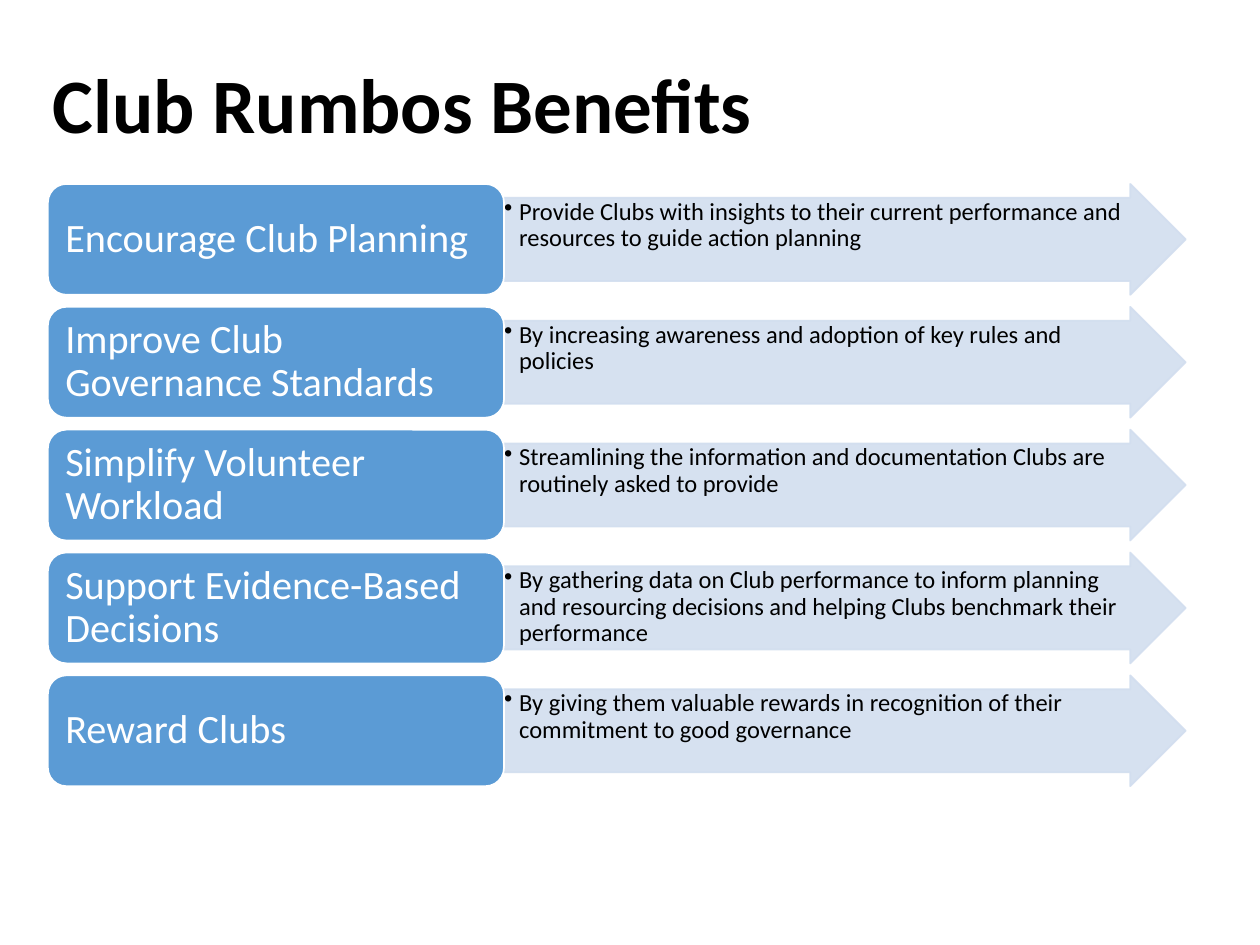
from lxml import etree
from pptx import Presentation
from pptx.dml.color import RGBColor
from pptx.enum.shapes import MSO_SHAPE
from pptx.enum.text import MSO_ANCHOR, MSO_AUTO_SIZE, PP_ALIGN
from pptx.oxml.ns import qn
from pptx.util import Inches, Pt

ARROW, ROUNDED = MSO_SHAPE.RIGHT_ARROW, MSO_SHAPE.ROUNDED_RECTANGLE
TOP, MIDDLE = MSO_ANCHOR.TOP, MSO_ANCHOR.MIDDLE
LEFT = PP_ALIGN.LEFT
NO_FIT = MSO_AUTO_SIZE.NONE

COLORS = {"black": "000000", "white": "FFFFFF", "blue": "5B9BD5", "pale": "D2DEEF"}

BENEFITS = [
    ("Encourage Club Planning",
     "Provide Clubs with insights to their current performance and resources to guide action planning"),
    ("Improve Club Governance Standards",
     "By increasing awareness and adoption of key rules and policies"),
    ("Simplify Volunteer Workload",
     "Streamlining the information and documentation Clubs are routinely asked to provide"),
    ("Support Evidence-Based Decisions",
     "By gathering data on Club performance to inform planning and resourcing decisions "
     "and helping Clubs benchmark their performance"),
    ("Reward Clubs",
     "By giving them valuable rewards in recognition of their commitment to good governance"),
]
ROW_TOP, ROW_BOTTOM, ROW_HEIGHT = 1.46, 6.24, 0.88
ROW_STEP = (ROW_BOTTOM - ROW_HEIGHT - ROW_TOP) / (len(BENEFITS) - 1)


def write(sp, text, size, color="black", bold=False, anchor=TOP, margins=(0.1, 0.05), bullet=False):
    tf = sp.text_frame
    tf.word_wrap = True
    tf.auto_size = NO_FIT
    tf.vertical_anchor = anchor
    tf.margin_left = tf.margin_right = Inches(margins[0])
    tf.margin_top = tf.margin_bottom = Inches(margins[1])
    p = tf.paragraphs[0]
    p.alignment = LEFT
    p.line_spacing = 0.9
    p.space_before = Pt(0)
    if bullet:
        pPr = p._p.get_or_add_pPr()
        pPr.set("marL", str(Inches(0.12)))
        pPr.set("indent", str(-Inches(0.12)))
        etree.SubElement(pPr, qn("a:buChar"), char="•")
    r = p.add_run()
    r.text = text
    r.font.name = "Calibri"
    r.font.size = Pt(size)
    r.font.bold = bold
    r.font.color.rgb = RGBColor.from_string(COLORS[color])


def add_block(shape, left, top, width, fill, line, alpha=None):
    sp = slide.shapes.add_shape(shape, Inches(left), Inches(top), Inches(width), Inches(ROW_HEIGHT))
    sp.shadow.inherit = False
    sp.fill.solid()
    sp.fill.fore_color.rgb = RGBColor.from_string(COLORS[fill])
    sp.line.color.rgb = RGBColor.from_string(COLORS[line])
    sp.line.width = Pt(1)
    if alpha:
        for clr in sp._element.spPr.iter(qn("a:srgbClr")):
            etree.SubElement(clr, qn("a:alpha"), val=str(alpha * 1000))
    return sp


prs = Presentation()
prs.slide_width, prs.slide_height = Inches(10), Inches(7.5)
slide = prs.slides.add_slide(prs.slide_layouts[5])

# Title
title = slide.shapes.title
title.left, title.top = Inches(0.32), Inches(0.14)
title.width, title.height = Inches(8.62), Inches(1.45)
write(title, "Club Rumbos Benefits", 44, bold=True, anchor=MIDDLE)

# One row per benefit: arrow with its explanation, then the heading block
for i, (heading, detail) in enumerate(BENEFITS):
    top = ROW_TOP + i * ROW_STEP

    arrow = add_block(ARROW, 3.99, top, 5.42, "pale", "pale", alpha=90)
    arrow.adjustments[0], arrow.adjustments[1] = 0.75, 0.5
    tb = slide.shapes.add_textbox(Inches(3.99), Inches(top + 0.11), Inches(5.05), Inches(0.66))
    write(tb, detail, 14, margins=(0.01, 0.01), bullet=True)

    add_block(ROUNDED, 0.38, top, 3.62, "blue", "white")
    tb = slide.shapes.add_textbox(Inches(0.42), Inches(top + 0.04), Inches(3.53), Inches(0.8))
    write(tb, heading, 23, color="white", anchor=MIDDLE)

prs.save("out.pptx")
